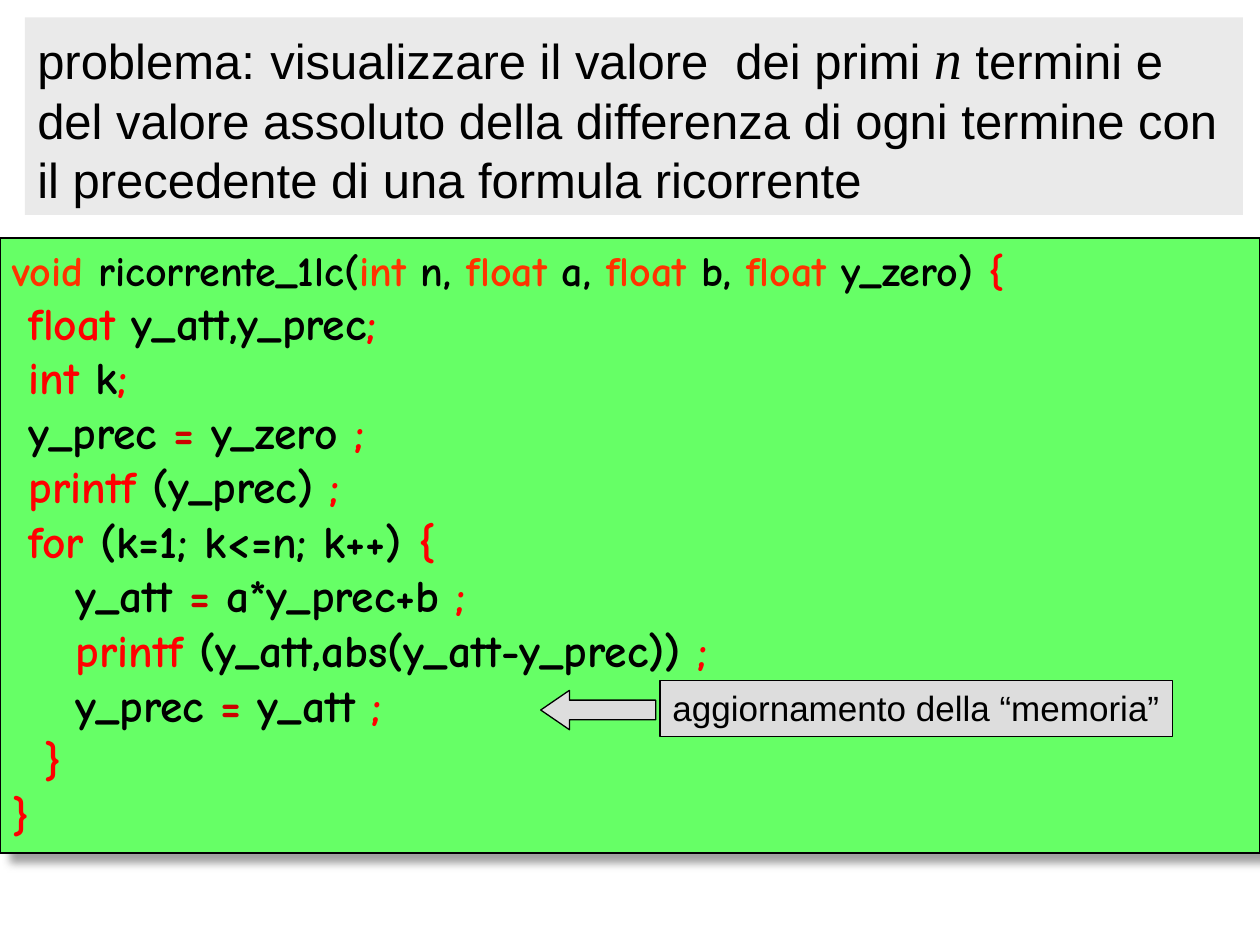
"""Build a slide on a recurrence formula, with its C function and a callout."""
import pptx
import pptx.dml.color
import pptx.enum.shapes
import pptx.enum.text
import pptx.oxml
import pptx.oxml.ns
import pptx.util

BLACK, ORANGE, RED, DARK_RED = "000000", "FF3300", "FF0000", "CC0000"
END = (" ;", RED)
EQUALS = ("= ", DARK_RED)

CODE_LINES = [
    [("void ", ORANGE), ("ricorrente_1lc(", BLACK), ("int ", ORANGE), ("n, ", BLACK),
     ("float ", ORANGE), ("a, ", BLACK), ("float ", ORANGE), ("b, ", BLACK),
     ("float ", ORANGE), ("y_zero) ", BLACK), ("{", RED)],
    [(" float ", RED), ("y_att,y_prec", BLACK), (";", RED)],
    [(" int ", RED), ("k", BLACK), (";", RED)],
    [(" y_prec ", BLACK), EQUALS, ("y_zero", BLACK), END],
    [(" printf ", RED), ("(y_prec)", BLACK), END],
    [(" for ", RED), ("(k=1; k<=n; k++) ", BLACK), ("{", RED)],
    [("\ty_att ", BLACK), EQUALS, ("a*y_prec+b", BLACK), END],
    [("\tprintf ", RED), ("(y_att,abs(y_att-y_prec))", BLACK), END],
    [("\ty_prec ", BLACK), EQUALS, ("y_att", BLACK), END],
    [("  }", RED)],
    [("}", RED)],
]
SIGNATURE_SIZE, BODY_SIZE = 24, 26

PROBLEM_RUNS = [
    ("problema:", 28, "Arial"),
    (" ", 32, "Arial"),
    ("visualizzare il valore  dei primi ", 28, "Arial"),
    ("n", 32, "Times New Roman"),
    (" termini e del valore assoluto della differenza di ogni termine con "
     "il precedente di una formula ricorrente", 28, "Arial"),
]
CALLOUT = "aggiornamento della “memoria”"

SHADOW = (
    '<a:effectLst {}><a:outerShdw blurRad="63500" dist="107950" dir="2700000" '
    'algn="ctr" rotWithShape="0"><a:srgbClr val="808080"><a:alpha val="75000"/>'
    '</a:srgbClr></a:outerShdw></a:effectLst>'
).format(pptx.oxml.ns.nsdecls("a"))


def color(value):
    return pptx.dml.color.RGBColor.from_string(value)


def add_box(shapes, kind, box, fill, line=None):
    shape = shapes.add_shape(kind, *(pptx.util.Pt(length) for length in box))
    shape.shadow.inherit = False
    shape.fill.solid()
    shape.fill.fore_color.rgb = color(fill)
    if line:
        shape.line.color.rgb = color(line)
        shape.line.width = pptx.util.Pt(0.75)
    else:
        shape.line.fill.background()
    shape.text_frame.vertical_anchor = pptx.enum.text.MSO_ANCHOR.TOP
    shape.text_frame.word_wrap = True
    return shape


def style_paragraph(paragraph, alignment, size, name):
    paragraph.alignment = alignment
    paragraph.font.size = pptx.util.Pt(size)
    paragraph.font.name = name
    paragraph.font.color.rgb = color(BLACK)


def add_code(shapes):
    shape = add_box(shapes, RECTANGLE, (0, 136, 720, 351.5), "66FF66", BLACK)
    properties = shape.element.spPr
    properties.remove(properties.find(pptx.oxml.ns.qn("a:effectLst")))
    properties.append(pptx.oxml.parse_xml(SHADOW))
    frame = shape.text_frame
    for index, runs in enumerate(CODE_LINES):
        paragraph = frame.add_paragraph() if index else frame.paragraphs[0]
        size = BODY_SIZE if index else SIGNATURE_SIZE
        style_paragraph(paragraph, ALIGN.JUSTIFY, size, "Comic Neue")
        paragraph.font.bold = True
        for text, shade in runs:
            run = paragraph.add_run()
            run.text = text
            run.font.color.rgb = color(shade)


def add_problem(shapes):
    shape = add_box(shapes, RECTANGLE, (14.2, 9.9, 696, 113), "EAEAEA")
    paragraph = shape.text_frame.paragraphs[0]
    style_paragraph(paragraph, ALIGN.LEFT, 28, "Arial")
    for text, size, name in PROBLEM_RUNS:
        run = paragraph.add_run()
        run.text = text
        run.font.size = pptx.util.Pt(size)
        run.font.name = name
        run.font.italic = name == "Times New Roman"


def add_callout(shapes):
    group = shapes.add_group_shape()
    label = add_box(group.shapes, RECTANGLE, (377.2, 389, 293, 32), "DDDDDD", BLACK)
    label.text_frame.word_wrap = False
    paragraph = label.text_frame.paragraphs[0]
    paragraph.text = CALLOUT
    style_paragraph(paragraph, ALIGN.LEFT, 20, "Arial")
    arrow = add_box(group.shapes, LEFT_ARROW, (309, 394.5, 65.7, 22.5), "DDDDDD", BLACK)
    arrow.adjustments[0] = 0.5
    arrow.adjustments[1] = 0.73


RECTANGLE = pptx.enum.shapes.MSO_SHAPE.RECTANGLE
LEFT_ARROW = pptx.enum.shapes.MSO_SHAPE.LEFT_ARROW
ALIGN = pptx.enum.text.PP_ALIGN


def main():
    presentation = pptx.Presentation()
    presentation.slide_width = pptx.util.Pt(720)
    presentation.slide_height = pptx.util.Pt(540)
    slide = presentation.slides.add_slide(presentation.slide_layouts[6])
    add_code(slide.shapes)
    add_problem(slide.shapes)
    add_callout(slide.shapes)
    presentation.save("out.pptx")


if __name__ == "__main__":
    main()
